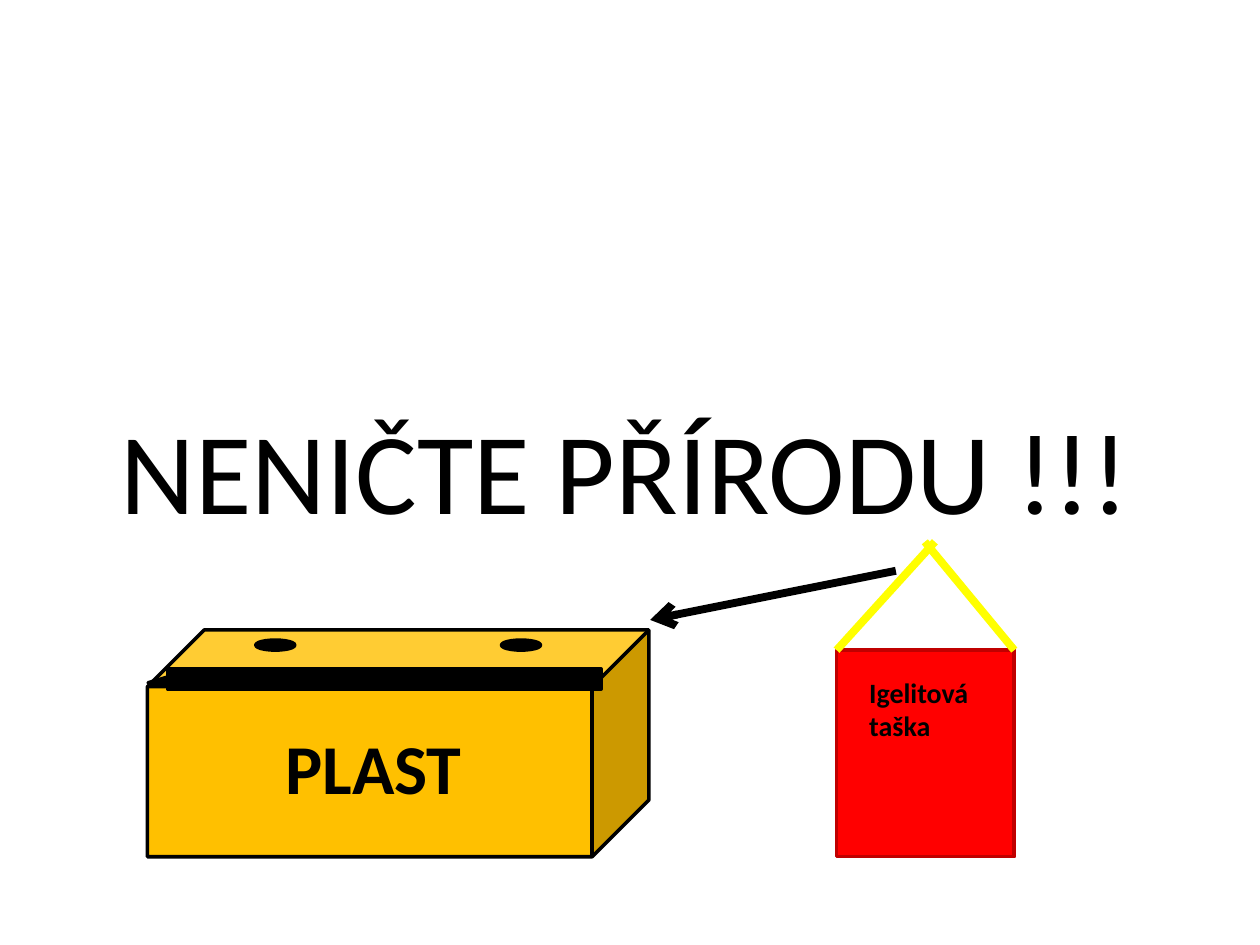
from dataclasses import dataclass
from typing import Optional

from lxml.etree import SubElement
from pptx import Presentation
from pptx.dml.color import RGBColor as RGB
from pptx.enum.shapes import MSO_CONNECTOR as Link, MSO_SHAPE as Kind
from pptx.enum.text import MSO_ANCHOR as Anchor, MSO_AUTO_SIZE as Fit, PP_ALIGN as Align
from pptx.oxml.ns import qn
from pptx.util import Inches, Pt


@dataclass(frozen=True)
class Theme:
    font: str = "Calibri"
    black: str = "000000"
    red: str = "FF0000"
    edge: str = "C00000"
    yellow: str = "FFFF00"
    gold: str = "FFC000"
    title: int = 66
    bin: int = 40
    bag: int = 16
    thin: float = 2
    thick: float = 4.5


T = Theme()


@dataclass(frozen=True)
class Part:
    kind: Kind
    box: tuple[float, float, float, float]
    fill: str = T.black
    line: str = T.black
    turn: float = 0


@dataclass(frozen=True)
class Line:
    start: tuple[float, float]
    end: tuple[float, float]
    color: str
    head: Optional[str] = None


@dataclass(frozen=True)
class Label:
    box: tuple[float, float, float, float]
    rows: tuple[str, ...]
    size: int
    align: Align = Align.LEFT
    bold: bool = True


def draw_part(slide, part: Part) -> None:
    shape = slide.shapes.add_shape(part.kind, *map(Inches, part.box))
    shape.shadow.inherit = False
    shape.rotation = part.turn
    shape.fill.solid()
    shape.fill.fore_color.rgb = RGB.from_string(part.fill)
    shape.line.color.rgb = RGB.from_string(part.line)
    shape.line.width = Pt(T.thin)


def draw_line(slide, line: Line) -> None:
    ends = map(Inches, line.start + line.end)
    link = slide.shapes.add_connector(Link.STRAIGHT, *ends)
    link.line.color.rgb = RGB.from_string(line.color)
    link.line.width = Pt(T.thick)
    if line.head:
        SubElement(link.line._get_or_add_ln(), qn("a:tailEnd"), type=line.head)
    SubElement(link._element.spPr, qn("a:effectLst"))


def set_text(shape, label: Label) -> None:
    shape.left, shape.top, shape.width, shape.height = map(Inches, label.box)
    frame = shape.text_frame
    frame.word_wrap = True
    frame.auto_size = Fit.SHAPE_TO_FIT_TEXT
    frame.vertical_anchor = Anchor.TOP
    for i, row in enumerate(label.rows):
        para = frame.add_paragraph() if i else frame.paragraphs[0]
        para.alignment = label.align
        run = para.add_run()
        run.text = row
        run.font.name = T.font
        run.font.size = Pt(label.size)
        run.font.bold = label.bold
        run.font.color.rgb = RGB.from_string(T.black)


def draw_label(slide, label: Label) -> None:
    set_text(slide.shapes.add_textbox(*map(Inches, label.box)), label)


TITLE = Label((0.86, 3.12, 8.59, 1.21), ("NENIČTE PŘÍRODU !!!",), T.title, bold=False)

BAG = (
    Part(Kind.RECTANGLE, (6.64, 5.16, 1.41, 1.64), T.red, T.edge),
    Line((8.05, 5.16), (7.34, 4.3), T.yellow),
    Line((6.64, 5.16), (7.42, 4.3), T.yellow),
    Label((6.8, 5.31, 1.09, 0.64), ("Igelitová", "taška"), T.bag),
)

BIN = (
    Part(Kind.CUBE, (1.17, 5, 3.98, 1.8), T.gold),
    Label((1.95, 5.7, 2.03, 0.77), ("PLAST",), T.bin, Align.CENTER),
    Part(Kind.RECTANGLE, (1.33, 5.31, 3.44, 0.16)),
    Part(Kind.RIGHT_TRIANGLE, (1.19, 5.36, 0.39, 0.16), turn=163.6),
    *(Part(Kind.OVAL, (x, 5.08, 0.31, 0.08)) for x in (2.03, 3.98)),
)

ARROW = Line((7.11, 4.53), (5.16, 4.92), T.black, "arrow")

DRAW = {Part: draw_part, Line: draw_line, Label: draw_label}


def main() -> None:
    deck = Presentation()
    deck.slide_width, deck.slide_height = Inches(10), Inches(7.5)
    slide = deck.slides.add_slide(deck.slide_layouts[5])
    set_text(slide.shapes.title, TITLE)
    for item in (*BAG, *BIN, ARROW):
        DRAW[type(item)](slide, item)
    deck.save("out.pptx")


if __name__ == "__main__":
    main()
